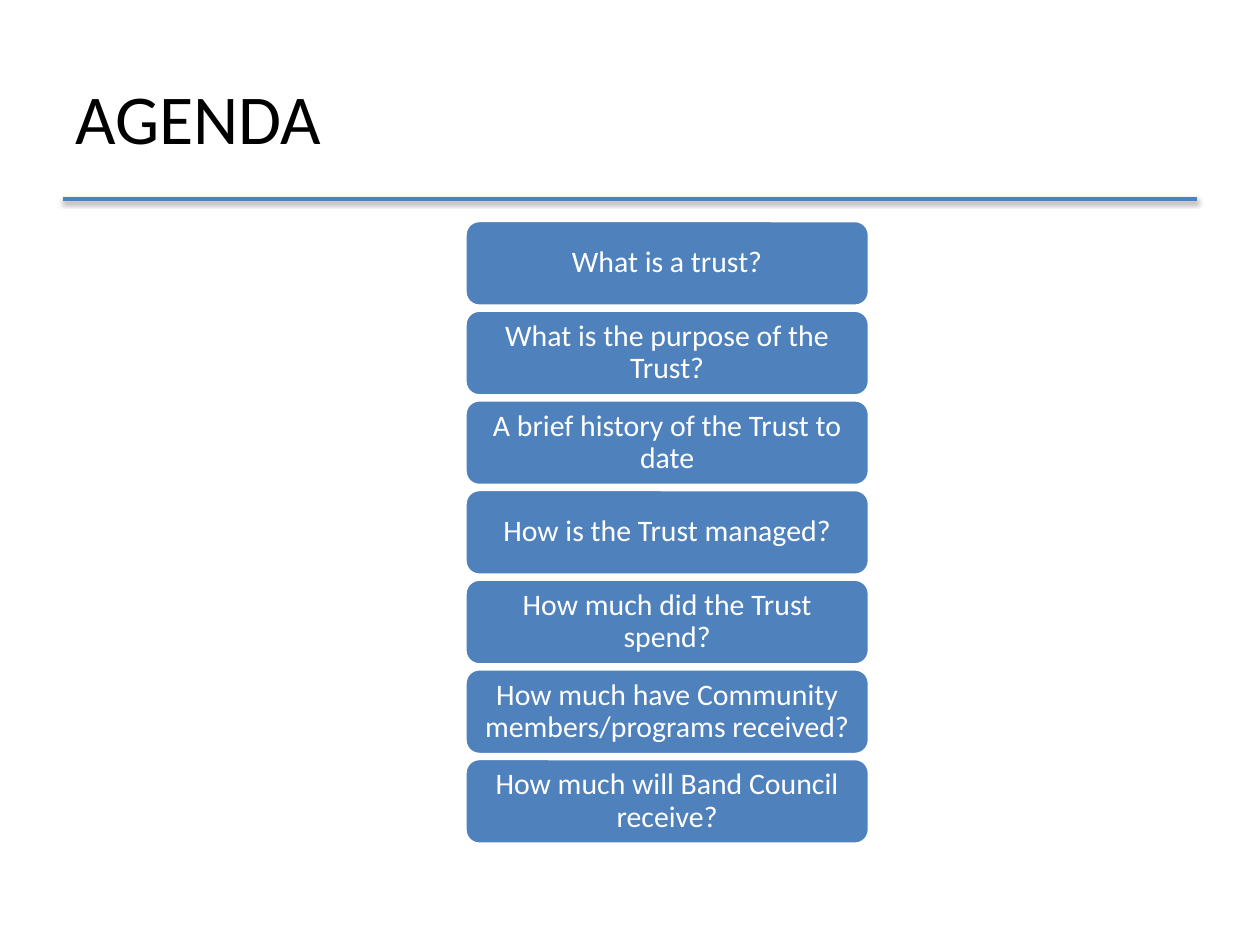
from dataclasses import dataclass

from lxml import etree
from pptx import Presentation
from pptx.dml.color import RGBColor
from pptx.enum.shapes import MSO_CONNECTOR, MSO_SHAPE
from pptx.enum.text import MSO_ANCHOR, PP_ALIGN
from pptx.oxml.ns import qn
from pptx.shapes.connector import Connector
from pptx.slide import Slide
from pptx.util import Inches, Pt

COLOURS = {"blue": "4F81BD", "white": "FFFFFF", "black": "000000"}
FONT = "Calibri"
CARD_LEFT, CARD_TOP = 3.69, 1.75
CARD_WIDTH, CARD_HEIGHT = 3.21, 0.68
CARD_PITCH = 4.27 / 6


@dataclass(frozen=True)
class AgendaItem:
    text: str
    top: float


QUESTIONS = [
    "What is a trust?",
    "What is the purpose of the Trust?",
    "A brief history of the Trust to date",
    "How is the Trust managed?",
    "How much did the Trust spend?",
    "How much have Community members/programs received?",
    "How much will Band Council receive?",
]
AGENDA = [AgendaItem(text, CARD_TOP + row * CARD_PITCH)
          for row, text in enumerate(QUESTIONS)]


def colour(name: str) -> RGBColor:
    return RGBColor.from_string(COLOURS[name])


def set_text(shape, text: str, size: float, colour_name: str, align: PP_ALIGN):
    """Write one vertically centred paragraph and return it."""
    frame = shape.text_frame
    frame.word_wrap = True
    frame.vertical_anchor = MSO_ANCHOR.MIDDLE
    paragraph = frame.paragraphs[0]
    paragraph.text = text
    paragraph.alignment = align
    paragraph.font.name = FONT
    paragraph.font.size = Pt(size)
    paragraph.font.color.rgb = colour(colour_name)
    return paragraph


def add_title(slide: Slide, text: str) -> None:
    title = slide.shapes.add_textbox(Inches(0.5), Inches(0.3), Inches(9), Inches(1.25))
    set_text(title, text, 40, "black", PP_ALIGN.LEFT)


def add_card(slide: Slide, item: AgendaItem) -> None:
    card = slide.shapes.add_shape(
        MSO_SHAPE.ROUNDED_RECTANGLE, Inches(CARD_LEFT), Inches(item.top),
        Inches(CARD_WIDTH), Inches(CARD_HEIGHT))
    card.shadow.inherit = False
    card.fill.solid()
    card.fill.fore_color.rgb = colour("blue")
    card.line.color.rgb = colour("white")
    card.line.width = Pt(2)
    frame = card.text_frame
    frame.margin_left = frame.margin_right = Inches(0.1)
    frame.margin_top = frame.margin_bottom = Inches(0.07)
    paragraph = set_text(card, item.text, 17, "white", PP_ALIGN.CENTER)
    paragraph.line_spacing = 0.9


def add_soft_shadow(connector: Connector) -> None:
    """Give the connector a blurred shadow that falls straight down."""
    effects = etree.SubElement(connector._element.spPr, qn("a:effectLst"))
    shadow = etree.SubElement(
        effects, qn("a:outerShdw"), blurRad=str(Pt(3.1)), dist=str(Pt(1.6)),
        dir=str(90 * 60000), rotWithShape="0")
    shade = etree.SubElement(shadow, qn("a:srgbClr"), val=COLOURS["black"])
    etree.SubElement(shade, qn("a:alpha"), val="38000")


def add_title_rule(slide: Slide) -> None:
    rule = slide.shapes.add_connector(
        MSO_CONNECTOR.STRAIGHT, Inches(0.5), Inches(1.58), Inches(9.5), Inches(1.58))
    rule.line.color.rgb = colour("blue")
    rule.line.width = Pt(2)
    add_soft_shadow(rule)


def main() -> None:
    presentation = Presentation()
    presentation.slide_width = Inches(10)
    presentation.slide_height = Inches(7.5)
    slide = presentation.slides.add_slide(presentation.slide_layouts[6])
    add_title(slide, "AGENDA")
    for item in AGENDA:
        add_card(slide, item)
    add_title_rule(slide)
    presentation.save("out.pptx")


if __name__ == "__main__":
    main()
